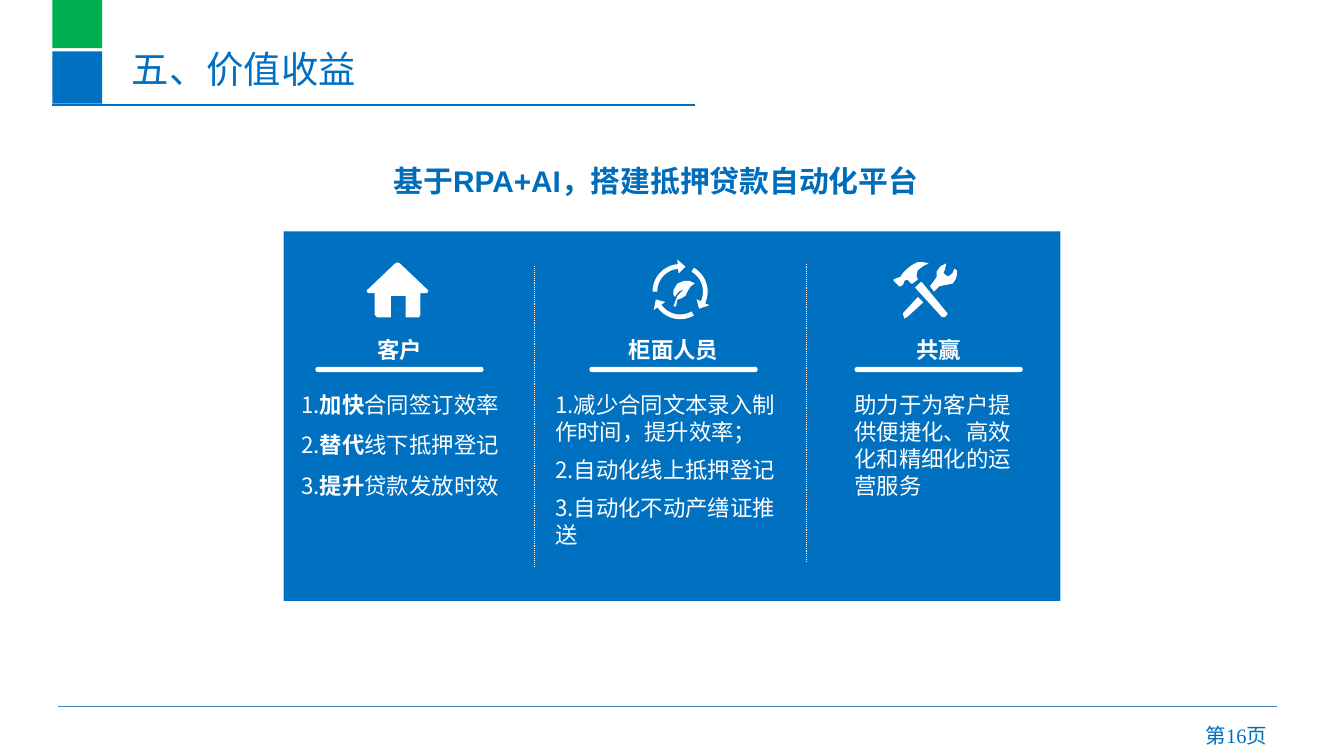
"""Builds the value and benefits slide of the mortgage automation deck."""
from math import cos, radians, sin

from lxml import etree
from pptx import Presentation
from pptx import util as u
from pptx.dml.color import RGBColor
from pptx.enum import dml, shapes, text
from pptx.oxml.ns import qn

COLORS = {"blue": "0070C0", "ink": "006DBB", "green": "00B050", "rule": "4B7EBC", "white": "FFFFFF"}
CJK, LATIN, SERIF = "Noto Sans CJK SC", "Arial", "Times New Roman"


def ring_arrow(turn):
    polar = [(0.17, a) for a in range(180, 94, -5)] + [(0.135, 95), (0.19, 78), (0.24, 95)]
    polar += [(0.205, a) for a in range(95, 181, 5)]
    return [(21 + 100 * r * cos(radians(a + turn)), 24 - 100 * r * sin(radians(a + turn)))
            for r, a in polar]


HOUSE = [[(46, 22), (25, 2), (23, 1), (21, 2), (0, 22), (1, 24), (6, 24), (6, 40), (8, 42),
          (18, 42), (18, 26), (29, 26), (29, 42), (39, 42), (40, 40), (40, 24), (45, 24)]]
LEAF = [(16, 23), (16, 26), (17, 28), (20, 24), (24, 22), (19, 27), (16, 35), (18, 35), (19, 30),
        (22, 29), (25, 27), (27, 23), (29, 20), (32, 18), (28, 16), (24, 16), (19, 18)]
CYCLE = [ring_arrow(turn) for turn in (0, 120, 240)] + [LEAF]
HAMMER_HEAD = [(8, 14), (10, 13), (13, 16), (14, 16), (18, 13), (17, 10), (18, 6), (22, 3), (26, 1),
               (22, 0), (18, 0), (14, 2), (10, 5), (7, 8), (5, 11), (2, 12), (0, 13), (0, 14),
               (4, 18), (5, 18), (7, 17)]
HAMMER_HANDLE = [(21, 15), (20, 15), (17, 18), (16, 19), (36, 41), (38, 41), (40, 39), (40, 38)]
WRENCH_HEAD = [(47, 6), (45, 5), (44, 8), (41, 10.5), (39, 10), (37, 8), (38, 6), (39, 2), (39, 1),
               (35, 3), (32, 7), (32, 11), (30, 14), (27, 18), (30, 22), (34, 18), (39, 17),
               (44, 16), (46, 13), (47, 10)]
WRENCH_HANDLE = [(7, 38), (7, 39), (8, 42), (10, 41), (22, 30), (18, 26)]
TOOLS = [HAMMER_HEAD, HAMMER_HANDLE, WRENCH_HEAD, WRENCH_HANDLE]

BENEFITS = [
    {"heading": "客户", "center": 7.55, "icon": HOUSE, "icon_at": (6.93, 4.93),
     "body_at": (5.69, 7.39, 3.94, 2.06), "later": {"line_spacing": 1.5}, "every": {},
     "body": [["1.", ("加快", {"bold": True}), "合同签订效率"],
              ["2.", ("替代", {"bold": True}), "线下抵押登记"],
              ["3.", ("提升", {"bold": True}), "贷款发放时效"]]},
    {"heading": "柜面人员", "center": 12.73, "icon": CYCLE, "icon_at": (12.32, 4.9),
     "body_at": (10.49, 7.39, 4.55, 3.0), "later": {}, "every": {"space_after": u.Pt(6)},
     "body": [["1.减少合同文本录入制作时间，提升效率；"], ["2.自动化线上抵押登记"],
              ["3.自动化不动产缮证推送"]]},
    {"heading": "共赢", "center": 17.74, "icon": TOOLS, "icon_at": (16.89, 4.95),
     "body_at": (16.15, 7.39, 3.18, 2.03), "later": {}, "every": {},
     "body": [["助力于为客户提供便捷化、高效化和精细化的运营服务"]]},
]
BLOCKS = [((0.99, 0.97, 0.94, 0.99), "blue"), ((0.99, 0, 0.94, 0.91), "green"),
          ((5.36, 4.37, 14.68, 6.98), "blue")]
RULES = [((0.99, 1.98, 13.13, 1.98), "blue", 0.75, None),
         ((1.09, 13.34, 24.13, 13.34), "rule", 0.75, None),
         ((10.11, 5.03, 10.11, 10.69), "white", 0.5, dml.MSO_LINE.ROUND_DOT),
         ((15.24, 4.98, 15.24, 10.62), "white", 0.5, dml.MSO_LINE.ROUND_DOT)]

deck = Presentation()
deck.slide_width, deck.slide_height = u.Cm(25.4), u.Cm(14.28)
slide = deck.slides.add_slide(deck.slide_layouts[6])


def cm(values):
    return [u.Cm(value) for value in values]


def apply(target, formats):
    for name, value in formats.items():
        setattr(target, name, value)


def paint(part, color):
    part.shadow.inherit = False
    part.fill.solid()
    part.fill.fore_color.rgb = RGBColor.from_string(COLORS[color])
    part.line.fill.background()


def block(box, color, kind=shapes.MSO_SHAPE.RECTANGLE):
    part = slide.shapes.add_shape(kind, *cm(box))
    paint(part, color)
    return part


def rule(ends, color, width, dash):
    line = slide.shapes.add_connector(shapes.MSO_CONNECTOR.STRAIGHT, *cm(ends))
    line.line.color.rgb = RGBColor.from_string(COLORS[color])
    apply(line.line, {"width": u.Pt(width), "dash_style": dash})
    etree.SubElement(line._element.spPr, qn("a:effectLst"))


def icon(outlines, at):
    step = u.Cm(2.54) / 100
    points = [[(x * step, y * step) for x, y in outline] for outline in outlines]
    pen = slide.shapes.build_freeform(*points[0][0])
    pen.add_line_segments(points[0][1:])
    for outline in points[1:]:
        pen.move_to(*outline[0])
        pen.add_line_segments(outline[1:])
    paint(pen.convert_to_shape(*cm(at)), "white")


def write(box, paragraphs, size, color, bold=False, inset=True, every=None, later=None):
    frame = slide.shapes.add_textbox(*cm(box)).text_frame
    frame.word_wrap = True
    if not inset:
        apply(frame, dict.fromkeys(("margin_left", "margin_top", "margin_right", "margin_bottom"), 0))
    for index, pieces in enumerate(paragraphs):
        paragraph = frame.add_paragraph() if index else frame.paragraphs[0]
        apply(paragraph, {**(every or {}), **((later or {}) if index else {})})
        for piece in pieces:
            words, own = piece if isinstance(piece, tuple) else (piece, {})
            run = paragraph.add_run()
            run.text = words
            run.font.color.rgb = RGBColor.from_string(COLORS[color])
            apply(run.font, {"size": u.Pt(size), "bold": bold, "name": CJK, **own})
            etree.SubElement(run.font._element, qn("a:ea"), typeface=CJK)


for box, color in BLOCKS:
    block(box, color)
for spec_of_rule in RULES:
    rule(*spec_of_rule)

write((2.24, 0.74, 16.92, 1.09), [["五、价值收益"]], 20, "blue")
write((7.19, 3.02, 11.35, 1.09), [["基于", ("RPA+AI", {"name": LATIN}), "，搭建抵押贷款自动化平台"]],
      16, "ink", bold=True, every={"line_spacing": u.Pt(17)})
write((20.62, 13.54, 3.58, 0.74), [["第", ("16", {"name": SERIF}), "页"]], 11, "ink",
      every={"alignment": text.PP_ALIGN.RIGHT})

for benefit in BENEFITS:
    center = benefit["center"]
    icon(benefit["icon"], benefit["icon_at"])
    write((center - 1.83, 6.22, 3.66, 0.77), [[benefit["heading"]]], 12, "white", bold=True,
          every={"alignment": text.PP_ALIGN.CENTER})
    underline = block((center - 1.59, 6.93, 3.18, 0.1), "white", shapes.MSO_SHAPE.ROUNDED_RECTANGLE)
    underline.adjustments[0] = 0.5
    write(benefit["body_at"], benefit["body"], 12, "white", inset=False,
          every=benefit["every"], later=benefit["later"])

deck.save("out.pptx")
